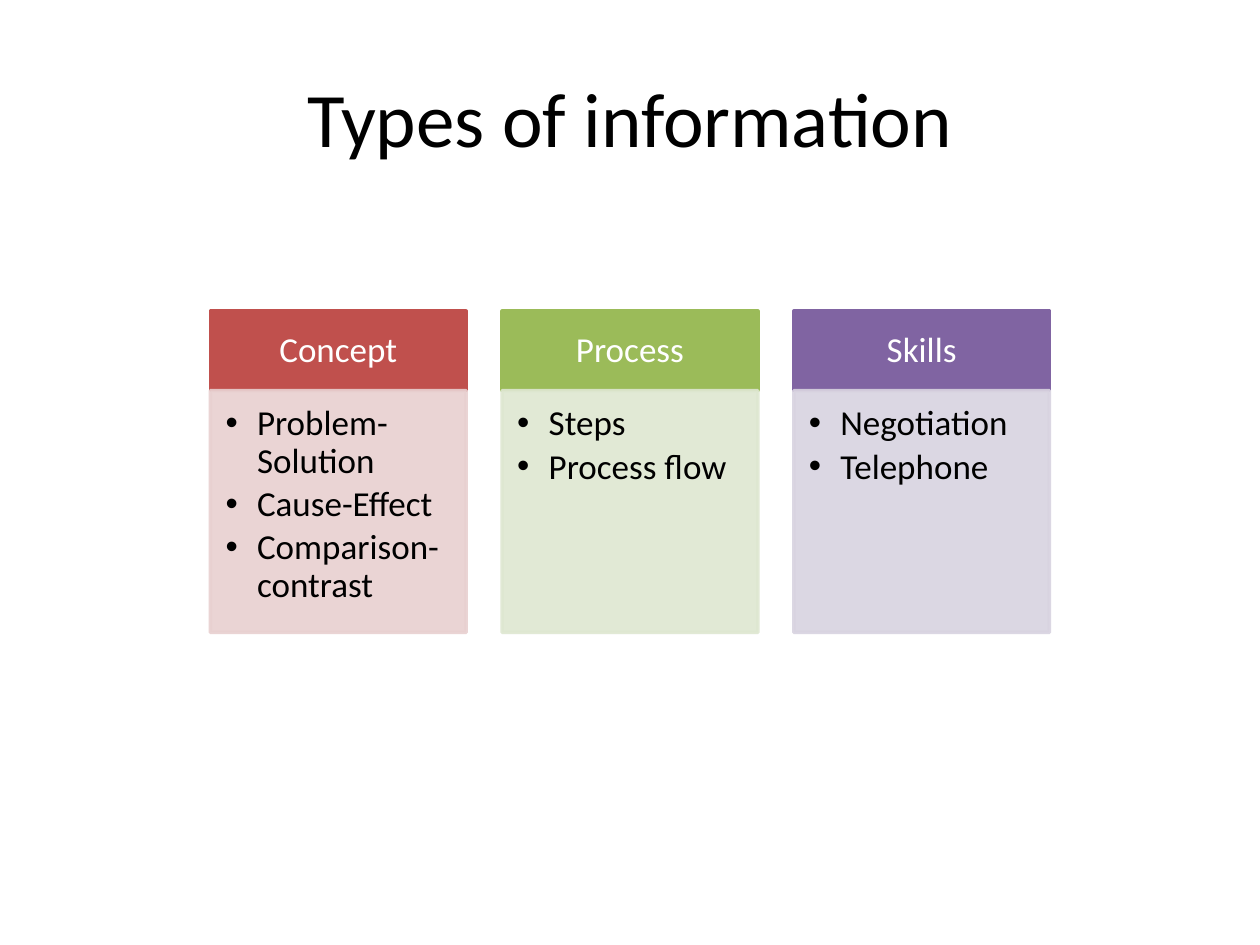
from lxml import etree
from pptx import Presentation
from pptx.dml.color import RGBColor
from pptx.enum.shapes import MSO_SHAPE
from pptx.enum.text import MSO_ANCHOR, PP_ALIGN
from pptx.oxml.ns import qn
from pptx.util import Inches, Pt

RECTANGLE = MSO_SHAPE.RECTANGLE
TOP, MIDDLE = MSO_ANCHOR.TOP, MSO_ANCHOR.MIDDLE
LEFT, CENTER = PP_ALIGN.LEFT, PP_ALIGN.CENTER

GRID_COLUMNS, GRID_ROWS = 100, 75
TITLE_ONLY_LAYOUT = 5
CARD_WIDTH, CARD_GAP = 20.3, 2.85
HEADER_TOP, HEADER_HEIGHT, BODY_HEIGHT = 24.7, 6.3, 19.2

CARDS = [
    ("Concept", "C0504D", "E8D0D0",
     ["Problem-Solution", "Cause-Effect", "Comparison-contrast"]),
    ("Process", "9BBB59", "DEE7D1", ["Steps", "Process flow"]),
    ("Skills", "8064A2", "D8D3E0", ["Negotiation", "Telephone"]),
]


def color(hex_value):
    return RGBColor.from_string(hex_value)


def set_opacity(fill_parent, percent):
    """Make the solid fill below the given XML element partly transparent."""
    color_element = fill_parent.find(qn("a:solidFill"))[0]
    etree.SubElement(color_element, qn("a:alpha"), val=str(percent * 1000))


def add_bullet(paragraph, indent):
    properties = paragraph._p.get_or_add_pPr()
    properties.set("marL", str(indent))
    properties.set("indent", str(-indent))
    etree.SubElement(properties, qn("a:buFont"), typeface="Arial")
    etree.SubElement(properties, qn("a:buChar"), char="•")


class SlideBuilder:
    """Holds the text style, the grid and the current slide."""

    font_name = "Calibri"
    title_size, text_size = 44, 20
    dark, light = "000000", "FFFFFF"
    line_spacing = 0.9

    def __init__(self, presentation):
        self.column = presentation.slide_width / GRID_COLUMNS
        self.row = presentation.slide_height / GRID_ROWS
        layout = presentation.slide_layouts[TITLE_ONLY_LAYOUT]
        self.slide = presentation.slides.add_slide(layout)

    def box(self, left, top, width, height):
        """Turn grid units into slide lengths."""
        return (round(left * self.column), round(top * self.row),
                round(width * self.column), round(height * self.row))

    def add_run(self, paragraph, text, size, hex_value):
        run = paragraph.add_run()
        run.text = text
        run.font.name = self.font_name
        run.font.size = Pt(size)
        run.font.color.rgb = color(hex_value)

    def title(self, text, *place):
        shape = self.slide.shapes.title
        shape.left, shape.top, shape.width, shape.height = self.box(*place)
        shape.text_frame.vertical_anchor = MIDDLE
        paragraph = shape.text_frame.paragraphs[0]
        paragraph.alignment = CENTER
        self.add_run(paragraph, text, self.title_size, self.dark)

    def panel(self, place, hex_value, margins, anchor):
        shape = self.slide.shapes.add_shape(RECTANGLE, *self.box(*place))
        shape.shadow.inherit = False
        shape.fill.solid()
        shape.fill.fore_color.rgb = color(hex_value)
        shape.line.color.rgb = color(hex_value)
        shape.line.width = Pt(2)
        frame = shape.text_frame
        frame.word_wrap = True
        frame.vertical_anchor = anchor
        (frame.margin_left, frame.margin_top,
         frame.margin_right, frame.margin_bottom) = map(Inches, margins)
        return shape

    def header(self, text, place, hex_value):
        shape = self.panel(place, hex_value, (0.16, 0.09, 0.16, 0.09), MIDDLE)
        paragraph = shape.text_frame.paragraphs[0]
        paragraph.alignment = CENTER
        paragraph.line_spacing = self.line_spacing
        self.add_run(paragraph, text, self.text_size, self.light)

    def bullet_list(self, items, place, hex_value):
        shape = self.panel(place, hex_value, (0.12, 0.12, 0.16, 0.17), TOP)
        set_opacity(shape._element.spPr, 90)
        set_opacity(shape.line._ln, 90)
        frame = shape.text_frame
        for index, item in enumerate(items):
            paragraph = frame.add_paragraph() if index else frame.paragraphs[0]
            paragraph.level = 1
            paragraph.alignment = LEFT
            paragraph.line_spacing = self.line_spacing
            paragraph.space_after = Pt(0.15 * self.text_size)
            add_bullet(paragraph, Inches(0.25))
            self.add_run(paragraph, item, self.text_size, self.dark)


def main():
    presentation = Presentation()
    presentation.slide_width = Inches(10)
    presentation.slide_height = Inches(7.5)
    builder = SlideBuilder(presentation)
    builder.title("Types of information", 5, 3, 90, 12.5)

    pitch = CARD_WIDTH + CARD_GAP
    first_left = (GRID_COLUMNS - len(CARDS) * pitch + CARD_GAP) / 2
    body_top = HEADER_TOP + HEADER_HEIGHT
    for index, (heading, header_color, body_color, items) in enumerate(CARDS):
        left = first_left + index * pitch
        builder.header(
            heading, (left, HEADER_TOP, CARD_WIDTH, HEADER_HEIGHT), header_color)
        builder.bullet_list(
            items, (left, body_top, CARD_WIDTH, BODY_HEIGHT), body_color)

    presentation.save("out.pptx")


if __name__ == "__main__":
    main()
